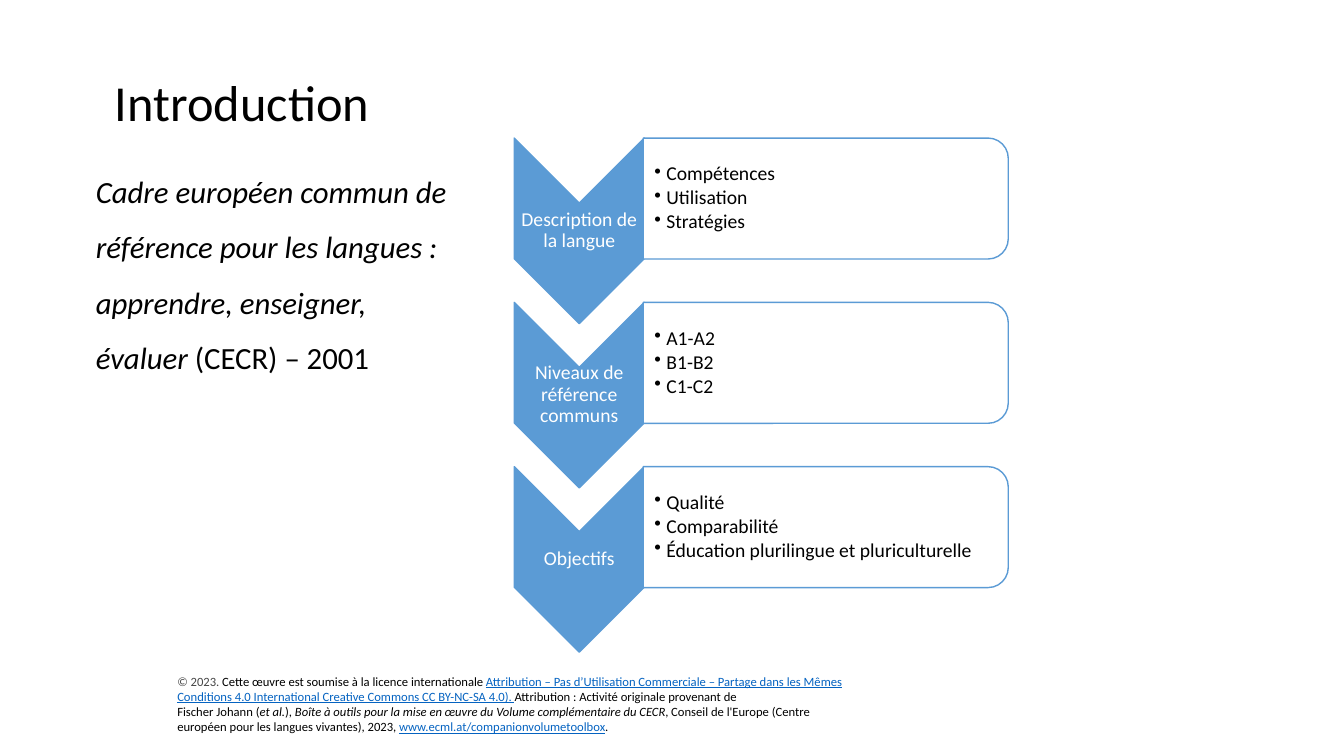
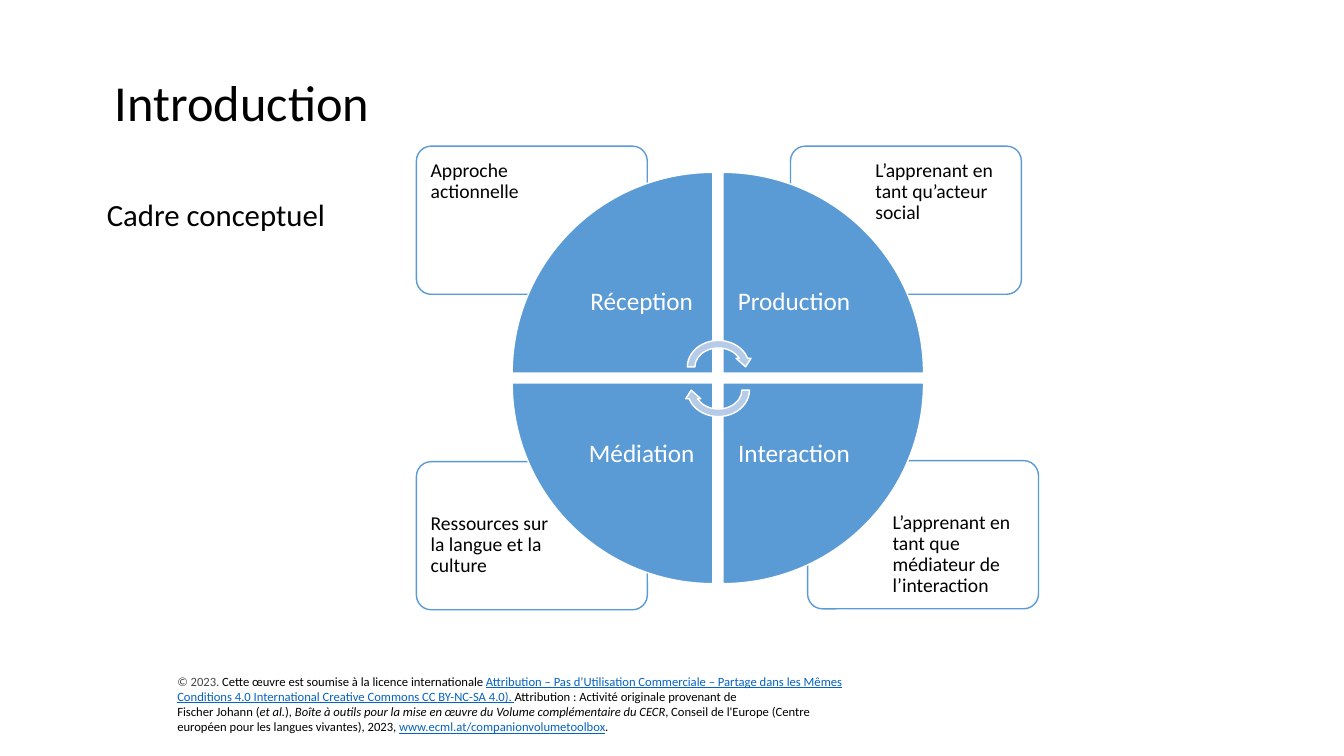
from lxml import etree
from pptx import Presentation
from pptx import util as u
from pptx.dml import color
from pptx.enum import shapes, text
from pptx.oxml import ns

PX = 9144  # EMU in one px: 100 px make an inch
FONT = "Calibri"
COLORS = {
    "blue": "5B9BD5",
    "pale": "B5CBE7",
    "white": "FFFFFF",
    "black": "000000",
    "grey": "464646",
    "link": "0563C1",
}
KINDS = shapes.MSO_SHAPE
ANCHORS = text.MSO_ANCHOR
ALIGN = text.PP_ALIGN

# Footer paragraphs: runs of (text, colour, style)
FOOTER = [
    [
        ("© 2023. ", "grey", ""),
        ("Cette œuvre est soumise à la licence internationale ", "black", ""),
        ("Attribution – Pas d’Utilisation Commerciale – Partage dans les Mêmes "
         "Conditions 4.0 International Creative Commons CC BY-NC-SA 4.0). ",
         "link", "underline"),
        ("Attribution : Activité originale provenant de", "black", ""),
    ],
    [
        ("Fischer Johann (", "black", ""),
        ("et al.", "black", "italic"),
        ("), ", "black", ""),
        ("Boîte à outils pour la mise en œuvre du Volume complémentaire du CECR",
         "black", "italic"),
        (", Conseil de l'Europe (Centre européen pour les langues vivantes), 2023, ",
         "black", ""),
        ("www.ecml.at/companionvolumetoolbox", "link", "underline"),
        (".", "black", ""),
    ],
]

CHEVRON_ROWS = [
    ("Description de la langue", ["Compétences", "Utilisation", "Stratégies"]),
    ("Niveaux de référence communs", ["A1-A2", "B1-B2", "C1-C2"]),
    ("Objectifs",
     ["Qualité", "Comparabilité", "Éducation plurilingue et pluriculturelle"]),
]

# Cards: left, top, column, row, text
CARDS = [
    (801, 457, 1, 1, "L’apprenant en tant que médiateur de l’interaction"),
    (413, 458, 0, 1, "Ressources sur la langue et la culture"),
    (784, 145, 1, 0, "L’apprenant en tant qu’acteur social"),
    (413, 145, 0, 0, "Approche actionnelle"),
]

# Wedges, clockwise from top left: column, row, label
WEDGES = [
    (0, 0, "Réception"),
    (1, 0, "Production"),
    (1, 1, "Interaction"),
    (0, 1, "Médiation"),
]


def px(*lengths):
    return [u.Emu(round(length * PX)) for length in lengths]


def rgb(name):
    return color.RGBColor.from_string(COLORS[name])


# Text
def set_frame(frame, anchor, margins=(10, 5, 10, 5)):
    frame.word_wrap = True
    frame.auto_size = text.MSO_AUTO_SIZE.NONE
    frame.vertical_anchor = anchor
    (frame.margin_left, frame.margin_top,
     frame.margin_right, frame.margin_bottom) = px(*margins)


def format_paragraph(paragraph, size, color_name="black", align=ALIGN.LEFT, spacing=0.9):
    paragraph.alignment = align
    paragraph.line_spacing = spacing
    paragraph.space_before = u.Pt(0)
    paragraph.font.name = FONT
    paragraph.font.size = u.Pt(size)
    paragraph.font.color.rgb = rgb(color_name)


def add_bullet(paragraph, indent=12):
    properties = paragraph._p.get_or_add_pPr()
    properties.set("marL", str(indent * PX))
    properties.set("indent", str(-indent * PX))
    etree.SubElement(properties, ns.qn("a:buChar"), char="•")


def add_text(slide, box, anchor, margins):
    frame = slide.shapes.add_textbox(*px(*box)).text_frame
    set_frame(frame, anchor, margins)
    return frame


def add_label(slide, box, label, size, margin):
    frame = add_text(slide, box, ANCHORS.MIDDLE, [margin] * 4)
    frame.text = label
    format_paragraph(frame.paragraphs[0], size, "white", ALIGN.CENTER)


def add_bullets(slide, box, items):
    frame = add_text(slide, box, ANCHORS.MIDDLE, (11, 1, 1, 1))
    frame.text = "\n".join(items)
    for paragraph in frame.paragraphs:
        add_bullet(paragraph)
        format_paragraph(paragraph, 14)
        paragraph.space_after = u.Pt(2)


# Shapes
def add_shape(slide, kind, box, fill, line, rotation=0):
    """Add a shape whose box is the one seen after rotation."""
    left, top, width, height = box
    if rotation in (90, 270):
        shift = (width - height) / 2
        left, top, width, height = left + shift, top - shift, height, width
    shape = slide.shapes.add_shape(kind, *px(left, top, width, height))
    shape.rotation = rotation
    shape.shadow.inherit = False
    shape.fill.solid()
    shape.fill.fore_color.rgb = rgb(fill)
    shape.line.color.rgb = rgb(line)
    shape.line.width = u.Pt(1)
    return shape


def add_chevron_row(slide, top, label, items):
    add_shape(slide, KINDS.CHEVRON, (510, top, 129, 184), "blue", "blue", 90)
    add_label(slide, (510, top + 64, 129, 55), label, 14, 1)
    add_shape(slide, KINDS.ROUND_2_SAME_RECTANGLE, (638, top, 362, 120),
              "white", "blue", 90)
    add_bullets(slide, (638, top + 6, 356, 108), items)


def add_card(slide, left, top, column, row, label):
    card = add_shape(slide, KINDS.ROUNDED_RECTANGLE, (left, top, 229, 147),
                     "white", "blue")
    card.adjustments[0] = 0.1
    inner, outer = 80, 10
    sides = (inner, outer) if column else (outer, inner)
    frame = card.text_frame
    set_frame(frame, ANCHORS.TOP, (sides[0], 47 if row else 10, sides[1], 5))
    frame.text = label
    format_paragraph(frame.paragraphs[0], 14)


def add_wheel(slide, left=508, top=171, size=199, gap=10, label_size=141):
    for index, (column, row, label) in enumerate(WEDGES):
        x = left + column * (size + gap)
        y = top + row * (size + gap)
        add_shape(slide, KINDS.PIE_WEDGE, (x, y, size, size),
                  "blue", "white", 90 * index)
        inset = size - label_size
        label_box = (x + inset * (1 - column), y + inset * (1 - row),
                     label_size, label_size)
        add_label(slide, label_box, label, 18, 14)
    for arrow_top, rotation in ((334, 0), (357, 180)):
        add_shape(slide, KINDS.CIRCULAR_ARROW, (678, arrow_top, 69, 60),
                  "pale", "white", rotation)


# Shared parts
def place(shape, box):
    shape.left, shape.top, shape.width, shape.height = px(*box)


def add_footer(layout, slide):
    """Build the footer on a slide, then move it to the layout."""
    box = slide.shapes.add_textbox(*px(166, 663, 685, 71))
    frame = box.text_frame
    set_frame(frame, ANCHORS.MIDDLE)
    for index, runs in enumerate(FOOTER):
        paragraph = frame.add_paragraph() if index else frame.paragraphs[0]
        format_paragraph(paragraph, 9, spacing=1.0)
        for words, color_name, style in runs:
            run = paragraph.add_run()
            run.text = words
            run.font.color.rgb = rgb(color_name)
            run.font.italic = style == "italic"
            run.font.underline = style == "underline"
    layout.shapes.element.append(box.element)


def add_slide(presentation, layout, body_box, body_runs):
    slide = presentation.slides.add_slide(layout)
    title, body = slide.placeholders
    title.text_frame.text = "Introduction"
    set_frame(title.text_frame, ANCHORS.BOTTOM)
    format_paragraph(title.text_frame.paragraphs[0], 36)

    place(body, body_box)
    set_frame(body.text_frame, ANCHORS.TOP)
    paragraph = body.text_frame.paragraphs[0]
    format_paragraph(paragraph, 22, spacing=1.5)
    for words, italic in body_runs:
        run = paragraph.add_run()
        run.text = words
        run.font.italic = italic
    return slide


def main():
    presentation = Presentation()
    presentation.slide_width, presentation.slide_height = px(1333, 750)
    layout = presentation.slide_layouts[0]
    place(layout.placeholders[0], (104, 46, 1063, 90))

    # Reference framework
    framework = add_slide(presentation, layout, (85, 148, 381, 290), [
        ("Cadre européen commun de référence pour les langues : "
         "apprendre, enseigner, évaluer", True),
        (" (CECR) – 2001", False),
    ])
    add_footer(layout, framework)
    for index, (label, items) in enumerate(CHEVRON_ROWS):
        add_chevron_row(framework, 137 + 163 * index, label, items)

    # Conceptual framework
    concept = add_slide(presentation, layout, (96, 171, 241, 168),
                        [("Cadre conceptuel", False)])
    for card in CARDS:
        add_card(concept, *card)
    add_wheel(concept)

    presentation.save("out.pptx")


if __name__ == "__main__":
    main()
